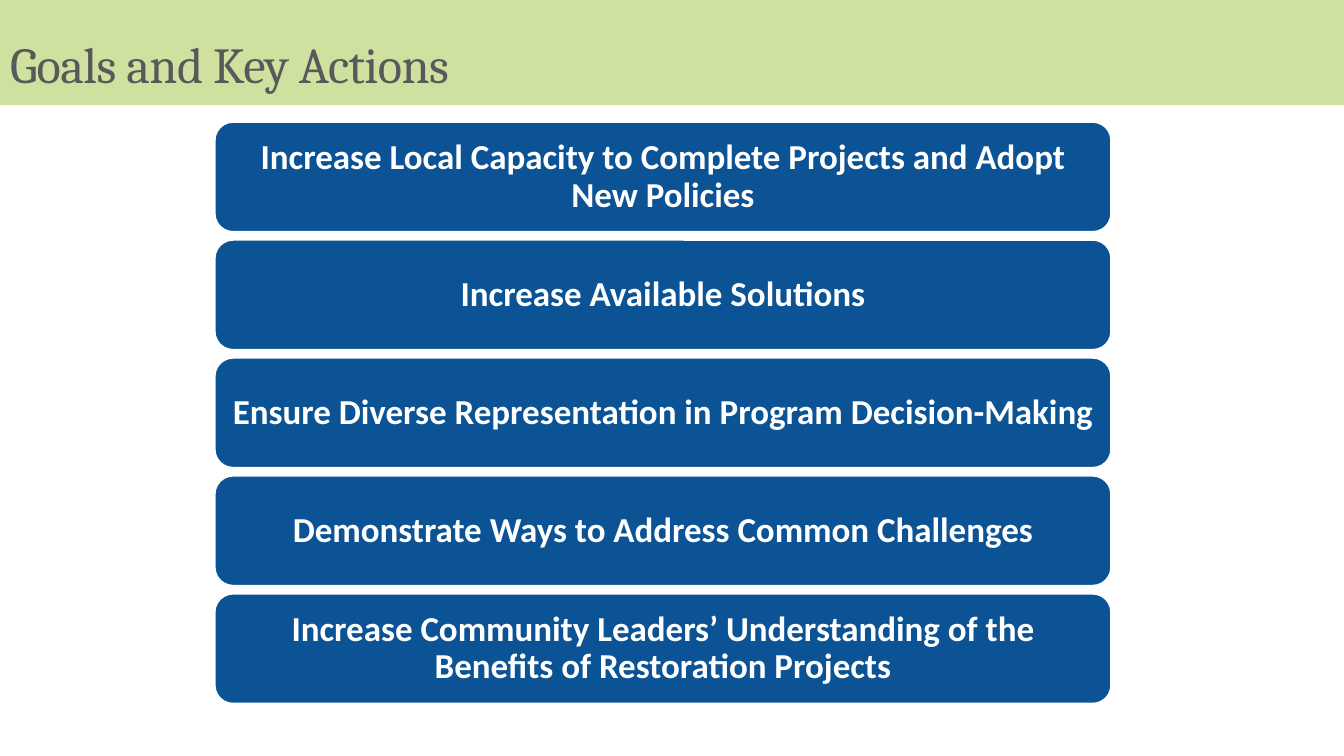
from pptx import Presentation
from pptx.dml.color import RGBColor
from pptx.enum.shapes import MSO_SHAPE
from pptx.enum.text import MSO_ANCHOR, MSO_AUTO_SIZE, PP_ALIGN
from pptx.util import Pt

EMU_PER_PX = 9144
COLORS = {"band": "CEE19F", "title": "58595B", "goal": "0B5395", "white": "FFFFFF"}
GOALS = [
    "Increase Local Capacity to Complete Projects and Adopt New Policies",
    "Increase Available Solutions",
    "Ensure Diverse Representation in Program Decision-Making",
    "Demonstrate Ways to Address Common Challenges",
    "Increase Community Leaders’ Understanding of the Benefits of Restoration Projects",
]
GOAL_LEFT, GOAL_TOP, GOAL_WIDTH, GOAL_HEIGHT, GOAL_GAP = 213, 121, 889, 109, 8
INSET = 10


def px(length):
    return length * EMU_PER_PX


def color(name):
    return RGBColor.from_string(COLORS[name])


def apply(target, values):
    for name, value in values.items():
        setattr(target, name, value)


def add_panel(page, preset, left, top, width, height, fill):
    panel = page.shapes.add_shape(preset, px(left), px(top), px(width), px(height))
    panel.shadow.inherit = False
    panel.fill.solid()
    panel.fill.fore_color.rgb = color(fill)
    panel.line.fill.background()
    return panel


def write_text(box, text, ink, frame_format, para_format, font_format):
    frame = box.text_frame
    apply(frame, {"word_wrap": True, "auto_size": MSO_AUTO_SIZE.NONE, **frame_format})
    para = frame.paragraphs[0]
    apply(para, para_format)
    span = para.add_run()
    span.text = text
    apply(span.font, font_format)
    span.font.color.rgb = color(ink)
    return span


def add_title(page, text):
    title = page.shapes.title
    apply(title, {"left": px(0), "top": px(1), "width": px(862), "height": px(97)})
    span = write_text(
        title, text, "title",
        {"vertical_anchor": MSO_ANCHOR.BOTTOM},
        {"alignment": PP_ALIGN.LEFT, "line_spacing": 0.85},
        {"name": "Cambria", "size": Pt(36)},
    )
    span.font._element.set("spc", "-40")
    band = add_panel(page, MSO_SHAPE.RECTANGLE, 0, 0, 1333, 104, "band")
    title.element.addprevious(band.element)


def add_goal(page, index, text):
    top = GOAL_TOP + index * (GOAL_HEIGHT + GOAL_GAP)
    goal = add_panel(page, MSO_SHAPE.ROUNDED_RECTANGLE,
                     GOAL_LEFT, top, GOAL_WIDTH, GOAL_HEIGHT, "goal")
    goal.line.color.rgb = color("white")
    goal.line.width = Pt(1.25)
    margins = {f"margin_{side}": px(INSET) for side in ("left", "top", "right", "bottom")}
    write_text(
        goal, text, "white",
        {"vertical_anchor": MSO_ANCHOR.MIDDLE, **margins},
        {"alignment": PP_ALIGN.CENTER, "line_spacing": 0.9},
        {"name": "Calibri", "size": Pt(25), "bold": True},
    )


def main():
    deck = Presentation()
    apply(deck, {"slide_width": px(1333), "slide_height": px(750)})
    page = deck.slides.add_slide(deck.slide_layouts.get_by_name("Title Only"))
    add_title(page, "Goals and Key Actions")
    for index, text in enumerate(GOALS):
        add_goal(page, index, text)
    deck.save("out.pptx")


if __name__ == "__main__":
    main()
